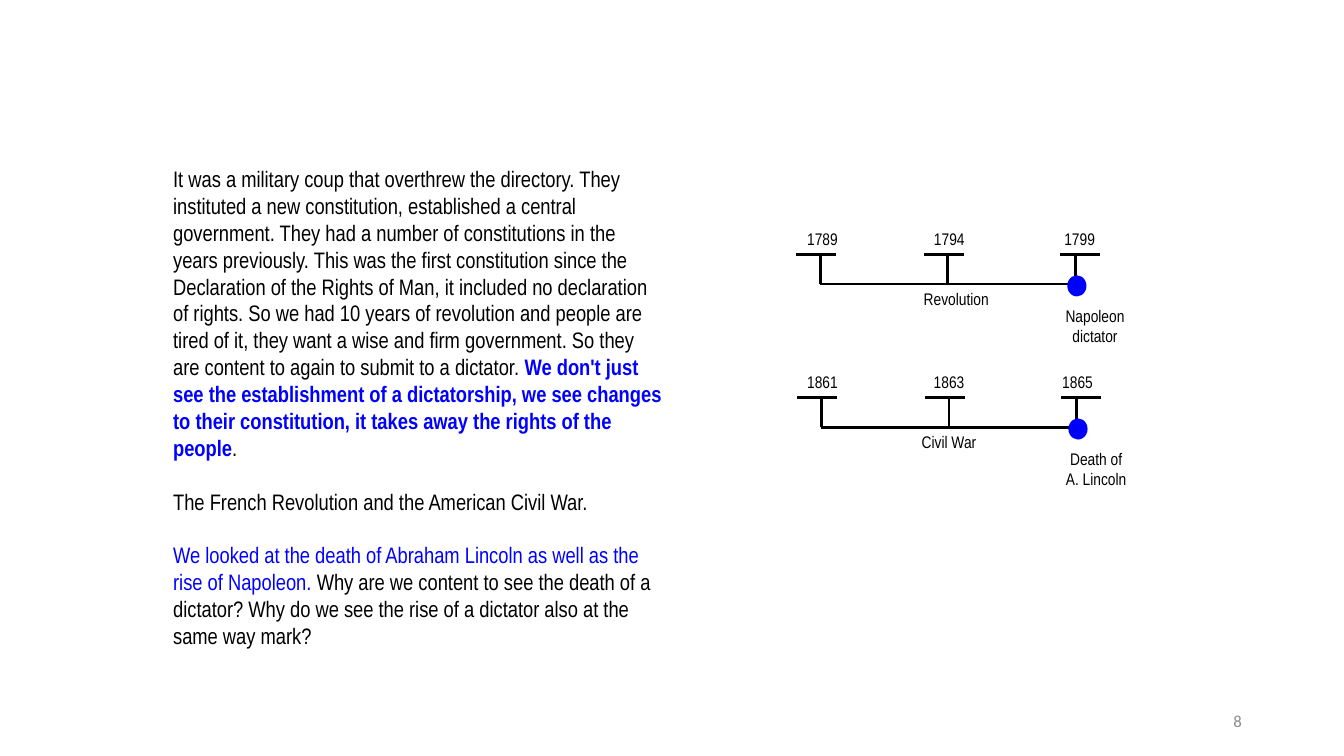
from pptx import Presentation
from pptx.dml.color import RGBColor
from pptx.enum.shapes import MSO_CONNECTOR, MSO_SHAPE
from pptx.enum.text import MSO_ANCHOR, PP_ALIGN
from pptx.oxml.ns import qn
from pptx.util import Pt

LINE, OVAL = MSO_CONNECTOR.STRAIGHT, MSO_SHAPE.OVAL
LEFT, CENTER, RIGHT = PP_ALIGN.LEFT, PP_ALIGN.CENTER, PP_ALIGN.RIGHT
TOP, MIDDLE = MSO_ANCHOR.TOP, MSO_ANCHOR.MIDDLE
BLACK, BLUE, GRAY = "000000", "0000FF", "8C8C8C"

BODY = [
    [("It was a military coup that overthrew the directory. They instituted a new "
      "constitution, established a central government. They had a number of "
      "constitutions in the years previously. This was the first constitution since "
      "the Declaration of the Rights of Man, it included no declaration of rights. So "
      "we had 10 years of revolution and people are tired of it, they want a wise and "
      "firm government. So they are content to again to submit to a dictator. ",
      BLACK, False),
     ("We don't just see the establishment of a dictatorship, we see changes to their "
      "constitution, it takes away the rights of the people", BLUE, True),
     (".", BLACK, False)],
    [("The French Revolution and the American Civil War.", BLACK, False)],
    [("We looked at the death of Abraham Lincoln as well as the rise of Napoleon. ",
      BLUE, False),
     ("Why are we content to see the death of a dictator? Why do we see the rise of a "
      "dictator also at the same way mark?", BLACK, False)],
]

# Left, top, years with label offsets, period with label offset, closing event
TIMELINES = [
    (586, 160.6, [("1789", 1.5), ("1794", 1), ("1799", 3)],
     ("Revolution", 6), ["Napoleon", "dictator"]),
    (586.8, 262.8, [("1861", 0.7), ("1863", 0), ("1865", 0.7)],
     ("Civil War", 0), ["Death of", "A. Lincoln"]),
]


def color(hex_value):
    return RGBColor.from_string(hex_value)


def add_text(s, box, paragraphs, size, font="Arial Narrow", align=LEFT,
             anchor=TOP, inset=(7.2, 3.6), gap=0):
    """Each paragraph is a list of (text, colour, bold) runs."""
    tf = s.shapes.add_textbox(*map(Pt, box)).text_frame
    x, y = map(Pt, inset)
    frame = dict(word_wrap=True, vertical_anchor=anchor, margin_left=x,
                 margin_right=x, margin_top=y, margin_bottom=y)
    for name, value in frame.items():
        setattr(tf, name, value)
    for i, runs in enumerate(paragraphs):
        p = tf.add_paragraph() if i else tf.paragraphs[0]
        p.alignment = align
        p.space_before = Pt(gap if i else 0)
        for text, hex_value, bold in runs:
            r = p.add_run()
            r.text = text
            for name, value in dict(name=font, size=Pt(size), bold=bold).items():
                setattr(r.font, name, value)
            r.font.color.rgb = color(hex_value)


def add_label(s, center, top, lines, width=125):
    height = 6.4 + 14.4 * len(lines)
    add_text(s, (center - width / 2, top, width, height),
             [[(line, BLACK, False)] for line in lines], 12,
             align=CENTER, inset=(3, 3))


def add_line(s, x1, y1, x2, y2):
    c = s.shapes.add_connector(LINE, *map(Pt, (x1, y1, x2, y2)))
    c.line.color.rgb = color(BLACK)
    c.line.width = Pt(2)
    c._element.spPr.append(c._element.makeelement(qn("a:effectLst"), {}))


def add_timeline(s, left, top, years, period, event, width=182.2):
    cap, axis = top + 21, top + 42.3
    right, step = left + width, width / (len(years) - 1)
    # Axis and period name
    add_line(s, left, axis, right, axis)
    name, offset = period
    add_label(s, left + width / 2 + offset, axis, [name])
    # Year marks: the cap of the last one is nearly centred
    for i, (year, offset) in enumerate(years):
        x = left + i * step
        start = x - (10.8 if i == len(years) - 1 else 17.3)
        add_line(s, x, cap, x, axis)
        add_line(s, start, cap, start + 28.6, cap)
        add_label(s, x + offset, top, [year], 55)
    # Closing event
    w, h = 13.7, 15.1
    dot = s.shapes.add_shape(
        OVAL, *map(Pt, (right + 1 - w / 2, axis + 1.3 - h / 2, w, h)))
    dot.shadow.inherit = False
    dot.fill.solid()
    dot.fill.fore_color.rgb = color(BLUE)
    dot.line.fill.background()
    add_label(s, right + 14, axis + 12.6, event, 58)


def main():
    prs = Presentation()
    prs.slide_width, prs.slide_height = Pt(960), Pt(540)
    s = prs.slides.add_slide(prs.slide_layouts[6])
    # Commentary
    add_text(s, (116.6, 114.5, 365.8, 358.6), BODY, 16, gap=19.2)
    # Timelines
    for timeline in TIMELINES:
        add_timeline(s, *timeline)
    # Slide number
    add_text(s, (678.2, 500.4, 216, 28.8), [[("8", GRAY, False)]], 12,
             font="Calibri", align=RIGHT, anchor=MIDDLE)
    prs.save("out.pptx")


if __name__ == "__main__":
    main()
